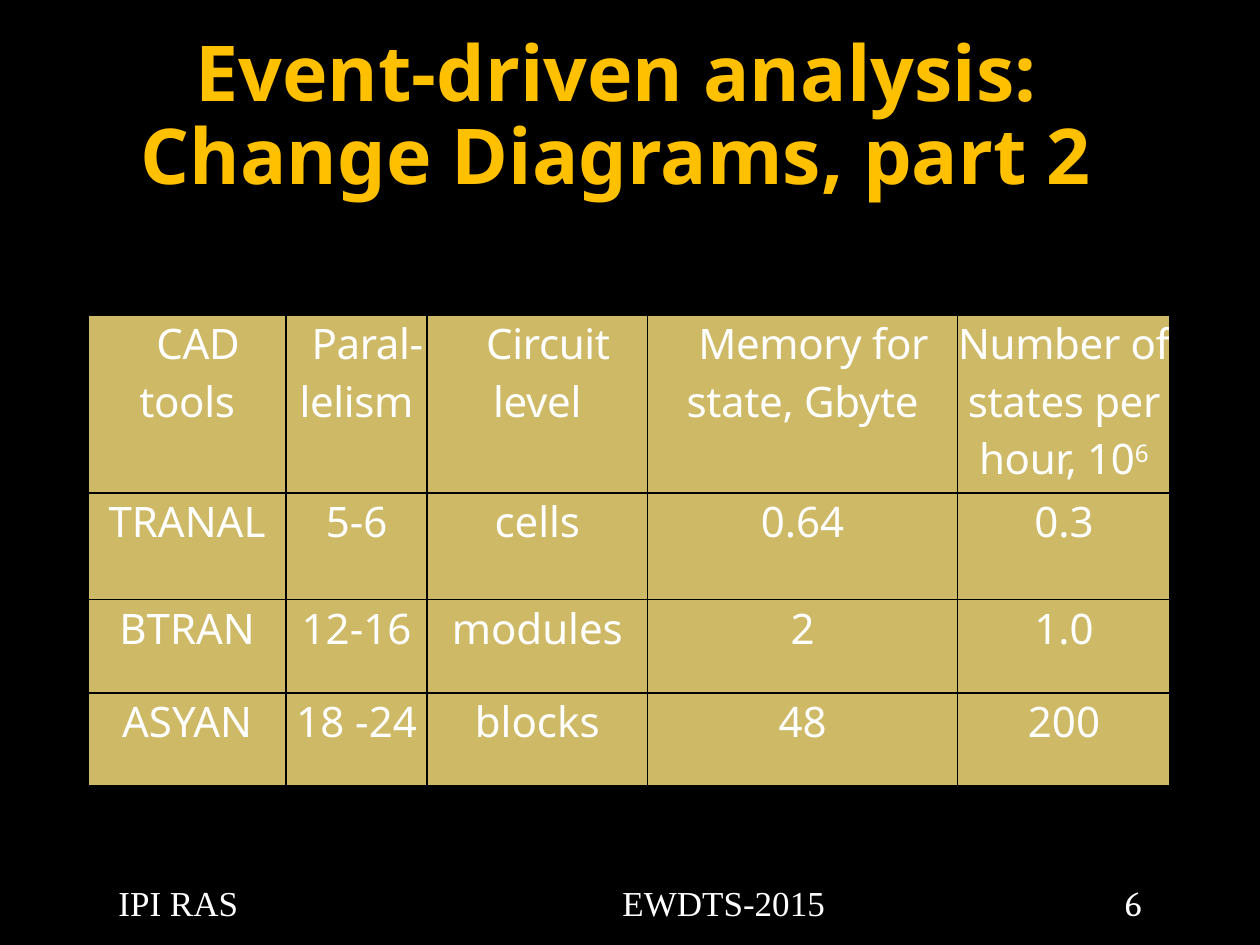
from dataclasses import dataclass
from lxml.etree import SubElement as Sub
from pptx import Presentation
from pptx.dml.color import RGBColor as RGB
from pptx.enum.text import MSO_ANCHOR as Anchor, PP_ALIGN as Align
from pptx.oxml.ns import qn
from pptx.util import Inches, Pt


@dataclass
class Theme:
    back: RGB = RGB(0, 0, 0)
    gold: RGB = RGB(0xFF, 0xC0, 0x00)
    sand: RGB = RGB(0xCE, 0xB9, 0x66)
    white: RGB = RGB(0xFF, 0xFF, 0xFF)
    sans: str = "Noto Sans"
    serif: str = "Times New Roman"
    title: int = 44
    cell: int = 24
    foot: int = 20


theme = Theme()


def style(font, name, size, color, bold=False):
    font.name, font.size, font.bold = name, Pt(size), bold
    font.color.rgb = color


def border(cell, side, width):
    line = Sub(cell._tc.get_or_add_tcPr(), qn("a:ln" + side), w=str(Pt(width)))
    fill = Sub(line, qn("a:solidFill"))
    Sub(fill, qn("a:srgbClr"), val=str(theme.back))


prs = Presentation()
prs.slide_width, prs.slide_height = Inches(10), Inches(7.5)
slide = prs.slides.add_slide(prs.slide_layouts[5])
slide.background.fill.solid()
slide.background.fill.fore_color.rgb = theme.back

# Title
title = slide.shapes.title
title.left, title.top = Inches(0.47), Inches(0)
title.width, title.height = Inches(9), Inches(1.87)
frame = title.text_frame
frame.text = "Event-driven analysis: \vChange Diagrams, part 2 "
frame.vertical_anchor = Anchor.MIDDLE
para = frame.paragraphs[0]
para.alignment, para.line_spacing = Align.CENTER, 0.9
style(para.font, theme.sans, theme.title, theme.gold, True)

# Table of tools
rows = [
    ["CAD tools", "Paral-lelism", "Circuit level", "Memory for state, Gbyte",
     "Number of states per hour, 10"],
    ["TRANAL", "5-6", "cells", "0.64", "0.3"],
    ["BTRAN", "12-16", "modules", "2", "1.0"],
    ["ASYAN", "18 -24", "blocks", "48", "200"],
]
widths = [1.57, 1.12, 1.75, 2.46, 1.69]
heights = [1.41, 0.85, 0.74, 0.74]
last_row, last_col = len(rows) - 1, len(widths) - 1
table = slide.shapes.add_table(
    len(rows), len(widths), Inches(0.7), Inches(2.5),
    Inches(sum(widths)), Inches(sum(heights))).table
table.first_row = table.horz_banding = False
for col, width in zip(table.columns, widths):
    col.width = Inches(width)
for row, height in zip(table.rows, heights):
    row.height = Inches(height)

for r, row in enumerate(rows):
    for c, text in enumerate(row):
        cell = table.cell(r, c)
        cell.margin_left = cell.margin_right = Inches(0)
        cell.margin_top = cell.margin_bottom = Inches(0)
        # Outer edges and the header rule are heavier
        heavy = {"L": c == 0, "R": c == last_col,
                 "T": r < 2, "B": r in (0, last_row)}
        for side, thick in heavy.items():
            border(cell, side, 1.5 if thick else 1)
        cell.fill.solid()
        cell.fill.fore_color.rgb = theme.sand
        para = cell.text_frame.paragraphs[0]
        para.alignment = Align.CENTER
        run = para.add_run()
        run.text = text
        if r == 0:
            run._r.get_or_add_rPr().set("spc", "-20")
            if c < last_col:
                para._p.get_or_add_pPr().set("indent", str(Inches(0.17)))
            else:
                power = para.add_run()
                power.text = "6"
                power._r.get_or_add_rPr().set("baseline", "30000")
        for run in para.runs:
            style(run.font, theme.sans, theme.cell, theme.white)

# Footer with tab stops
foot = slide.shapes.add_textbox(
    Inches(0.31), Inches(6.64), Inches(9.38), Inches(0.86))
frame = foot.text_frame
frame.word_wrap = True
frame.margin_left, frame.margin_top = Inches(0.63), Inches(0.36)
para = frame.paragraphs[0]
tabs = Sub(para._p.get_or_add_pPr(), qn("a:tabLst"))
for stop in (4, 7.99):
    Sub(tabs, qn("a:tab"), pos=str(Inches(stop)), algn="l")
for text, name in (("IPI RAS\tEWDTS-2015", theme.serif), ("\t6", "Cambria")):
    run = para.add_run()
    run.text = text
    style(run.font, name, theme.foot, theme.white)

prs.save("out.pptx")
